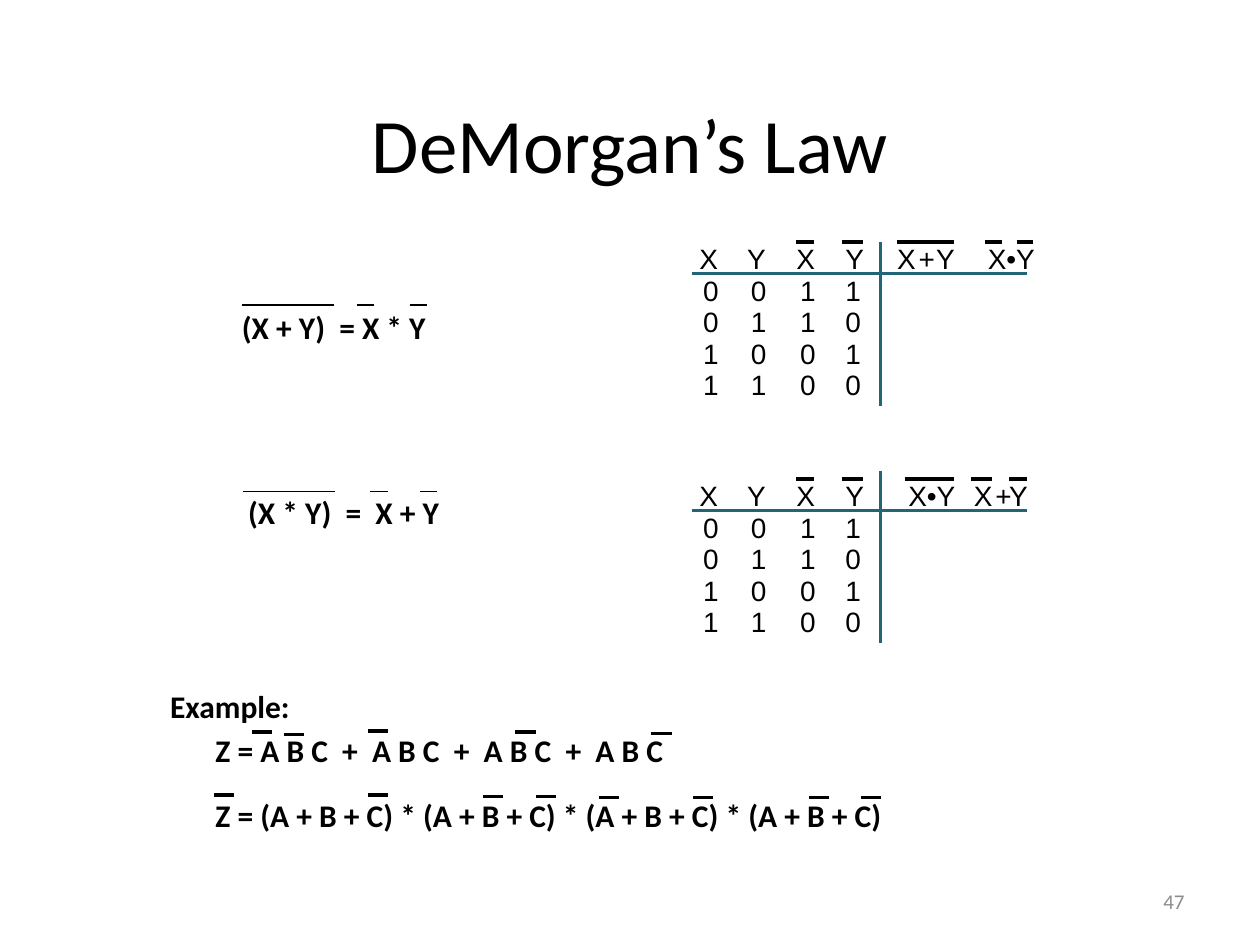
from typing import NamedTuple

from pptx import Presentation
from pptx.dml.color import RGBColor
from pptx.enum import shapes, text
from pptx.oxml.ns import qn
from pptx.util import Inches, Pt

COLORS = {"ink": "000000", "rule": "226577", "number": "8C8C8C"}
ROW_STEP = 0.25
CELL_HEIGHT = 0.27
LETTER_WIDTH, DIGIT_WIDTH, PRODUCT_WIDTH = 0.21, 0.19, 0.44


class Label(NamedTuple):
    left: float
    top: float
    width: float
    height: float
    lines: tuple[str, ...]


class Column(NamedTuple):
    head: str
    head_left: float
    digit_left: float
    digits: str


class Term(NamedTuple):
    text: str
    left: float
    width: float


class TruthTable(NamedTuple):
    top: float
    rule_top: float
    rule_bottom: float
    terms: tuple[Term, ...]
    bars: tuple[tuple[float, float], ...]


class Overbars(NamedTuple):
    """Bars of one formula: line width, and (left, width, y) of each."""
    weight: float
    bars: tuple[tuple[float, float, float], ...]


COLUMNS = (
    Column("X", 5.55, 5.58, "0011"),
    Column("Y", 5.93, 5.96, "0101"),
    Column("X", 6.32, 6.35, "1100"),
    Column("Y", 6.71, 6.71, "1010"),
)
INPUT_BARS = ((6.32, 6.46), (6.68, 6.85))

TABLES = (
    TruthTable(
        1.92, 1.92, 3.22,
        (Term("X", 7.12, LETTER_WIDTH), Term("+", 7.29, DIGIT_WIDTH),
         Term("Y", 7.43, LETTER_WIDTH), Term("X•Y", 7.84, PRODUCT_WIDTH)),
        ((7.12, 7.57), (7.82, 7.95), (8.07, 8.2)),
    ),
    TruthTable(
        3.8, 3.74, 5.1,
        (Term("X", 7.73, LETTER_WIDTH), Term("+", 7.9, DIGIT_WIDTH),
         Term("Y", 8.01, LETTER_WIDTH), Term("X•Y", 7.21, PRODUCT_WIDTH)),
        ((7.18, 7.57), (7.71, 7.87), (8.01, 8.15)),
    ),
)

FORMULAS = (
    Label(1.85, 2.46, 1.62, 0.32, ("(X + Y)  = X * Y",)),
    Label(1.9, 3.93, 1.68, 0.32, ("(X * Y)  =  X + Y",)),
    Label(1.28, 5.47, 1.1, 0.32, ("Example:",)),
    Label(1.64, 5.82, 5.51, 0.83, (
        "Z = A B C  +  A B C  +  A B C  +  A B C",
        "Z = (A + B + C) * (A + B + C) * (A + B + C) * (A + B + C)",
    )),
)

FORMULA_BARS = (
    Overbars(1, ((1.92, 0.73, 2.42), (2.83, 0.14, 2.42), (3.25, 0.14, 2.42))),
    Overbars(1, ((1.93, 0.73, 3.9), (2.94, 0.14, 3.9), (3.33, 0.14, 3.9))),
    Overbars(2, ((2, 0.16, 5.81), (2.25, 0.16, 5.83), (2.92, 0.16, 5.8),
                 (4.09, 0.16, 5.81), (5.17, 0.16, 5.82))),
    Overbars(2, ((1.7, 0.16, 6.31), (2.92, 0.16, 6.31), (3.83, 0.16, 6.32),
                 (4.25, 0.16, 6.32), (4.75, 0.16, 6.33), (5.5, 0.16, 6.33),
                 (6.42, 0.16, 6.33), (6.83, 0.16, 6.33))),
)


def add_run(p, words: str, size: float, font: str = "Calibri",
            color: str = "ink", bold: bool = False) -> None:
    r = p.add_run()
    r.text = words
    r.font.size = Pt(size)
    r.font.name = font
    r.font.bold = bold
    r.font.color.rgb = RGBColor.from_string(COLORS[color])


def add_box(slide, left: float, top: float, width: float, height: float,
            inset_x: float = 0, inset_y: float = 0):
    """Add an unwrapped text box and return its text frame."""
    sp = slide.shapes.add_textbox(
        Inches(left), Inches(top), Inches(width), Inches(height))
    tf = sp.text_frame
    tf.margin_left = tf.margin_right = Inches(inset_x)
    tf.margin_top = tf.margin_bottom = Inches(inset_y)
    tf.word_wrap = False
    tf.auto_size = text.MSO_AUTO_SIZE.SHAPE_TO_FIT_TEXT
    return tf


def add_line(slide, x1: float, y1: float, x2: float, y2: float,
             color: str = "ink", weight: float = 2) -> None:
    line = slide.shapes.add_connector(
        shapes.MSO_CONNECTOR.STRAIGHT,
        Inches(x1), Inches(y1), Inches(x2), Inches(y2))
    line.line.color.rgb = RGBColor.from_string(COLORS[color])
    line.line.width = Pt(weight)
    sp_pr = line._element.spPr
    sp_pr.append(sp_pr.makeelement(qn("a:effectLst"), {}))


def add_cell(slide, words: str, left: float, top: float, width: float) -> None:
    tf = add_box(slide, left, top, width, CELL_HEIGHT)
    add_run(tf.paragraphs[0], words, 16, "Arial")


def add_formula(slide, label: Label) -> None:
    tf = add_box(slide, label.left, label.top, label.width, label.height, 0.07, 0.03)
    for i, words in enumerate(label.lines):
        p = tf.add_paragraph() if i else tf.paragraphs[0]
        p.line_spacing = 0.85
        if i:
            p.space_before = Pt(18.7)
        add_run(p, words, 18, bold=True)


def add_truth_table(slide, table: TruthTable) -> None:
    for column in COLUMNS:
        add_cell(slide, column.head, column.head_left, table.top, LETTER_WIDTH)
        for row, digit in enumerate(column.digits, start=1):
            add_cell(slide, digit, column.digit_left,
                     table.top + row * ROW_STEP, DIGIT_WIDTH)
    for term in table.terms:
        add_cell(slide, term.text, term.left, table.top, term.width)
    head_bottom = table.top + ROW_STEP
    add_line(slide, 5.49, head_bottom, 8.15, head_bottom, "rule")
    add_line(slide, 6.99, table.rule_top, 6.99, table.rule_bottom, "rule")
    for x1, x2 in INPUT_BARS + table.bars:
        add_line(slide, x1, table.top, x2, table.top)


def add_title(slide) -> None:
    title = slide.shapes.title
    title.left, title.top = Inches(0.5), Inches(0.3)
    title.width, title.height = Inches(9), Inches(1.25)
    tf = title.text_frame
    tf.vertical_anchor = text.MSO_ANCHOR.BOTTOM
    p = tf.paragraphs[0]
    p.alignment = text.PP_ALIGN.CENTER
    add_run(p, "DeMorgan’s Law", 44)


def add_slide_number(slide) -> None:
    tf = add_box(slide, 7.17, 6.95, 2.33, 0.4, 0.1, 0.05)
    tf.word_wrap = True
    tf.auto_size = text.MSO_AUTO_SIZE.NONE
    tf.vertical_anchor = text.MSO_ANCHOR.MIDDLE
    p = tf.paragraphs[0]
    p.alignment = text.PP_ALIGN.RIGHT
    add_run(p, "47", 12, color="number")


def main() -> None:
    prs = Presentation()
    prs.slide_width, prs.slide_height = Inches(10), Inches(7.5)
    slide = prs.slides.add_slide(prs.slide_layouts.get_by_name("Title Only"))
    add_slide_number(slide)
    add_title(slide)
    for label in FORMULAS:
        add_formula(slide, label)
    for table in TABLES:
        add_truth_table(slide, table)
    for group in FORMULA_BARS:
        for left, width, y in group.bars:
            add_line(slide, left, y, left + width, y, weight=group.weight)
    prs.save("out.pptx")


if __name__ == "__main__":
    main()
